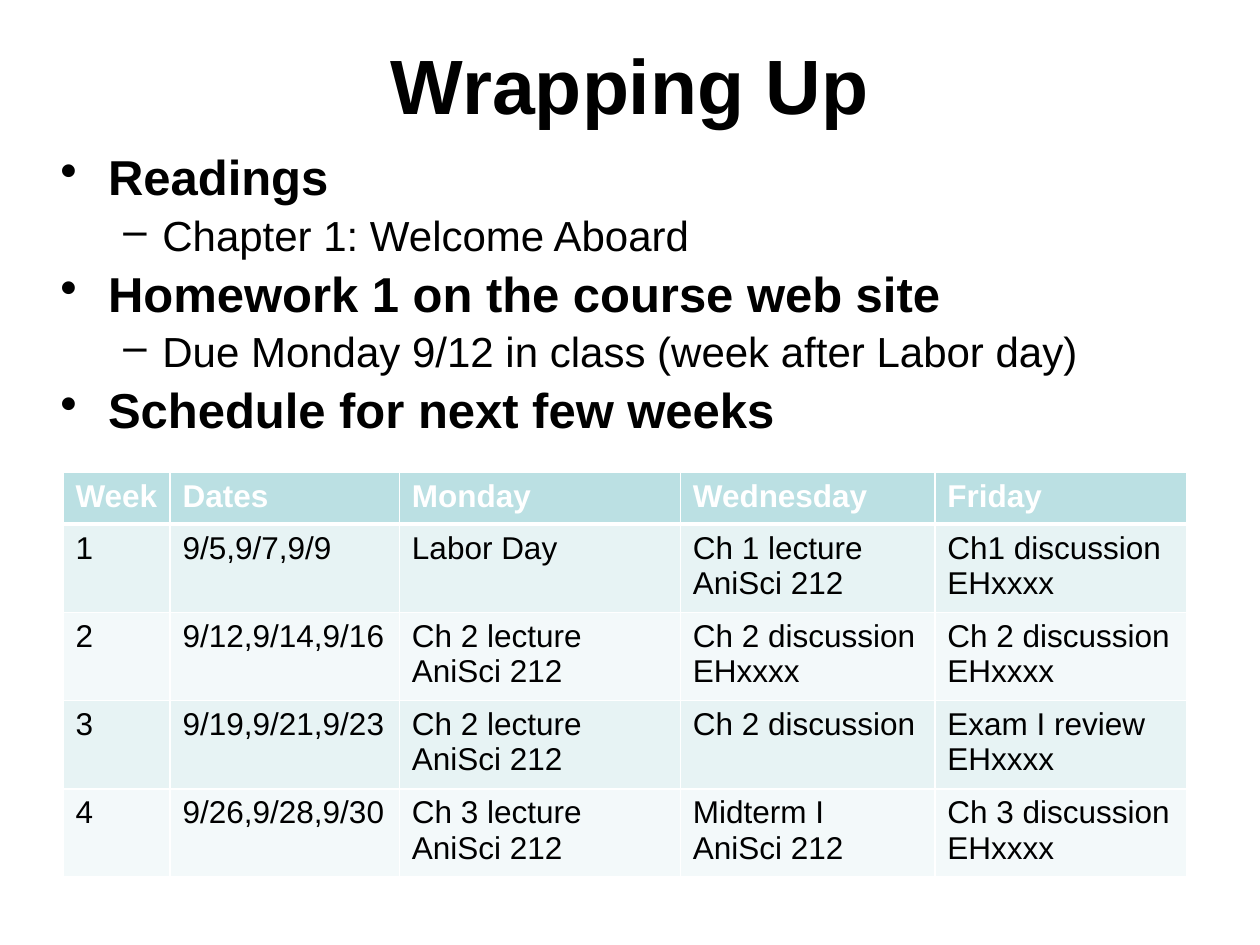
from pptx import Presentation
from pptx.dml.color import RGBColor
from pptx.enum.text import MSO_ANCHOR, PP_ALIGN
from pptx.oxml.ns import qn
from pptx.util import Inches, Pt
from lxml import etree

MIDDLE, CENTER = MSO_ANCHOR.MIDDLE, PP_ALIGN.CENTER
FACE, BLACK, WHITE = "Arial", "000000", "FFFFFF"
HEAD, BANDS = "BBE0E3", ("E7F3F4", "F3F9FA")

TITLE = "Wrapping Up"
POINTS = [
    (0, "Readings"),
    (1, "Chapter 1: Welcome Aboard"),
    (0, "Homework 1 on the course web site"),
    (1, "Due Monday 9/12 in class (week after Labor day)"),
    (0, "Schedule for next few weeks"),
]
# Per level: size, bold, left margin, hanging indent, bullet
LEVELS = [(28, True, 0.38, 0.38, "•"), (24, False, 0.81, 0.31, "–")]

WIDTHS = [0.85, 1.82, 2.23, 2.02, 2]
ROWS = [
    ["Week", "Dates", "Monday", "Wednesday", "Friday"],
    ["1", "9/5,9/7,9/9", "Labor Day", "Ch 1 lecture AniSci 212",
     "Ch1 discussion\nEHxxxx"],
    ["2", "9/12,9/14,9/16", "Ch 2 lecture\nAniSci 212",
     "Ch 2 discussion\nEHxxxx", "Ch 2 discussion\nEHxxxx"],
    ["3", "9/19,9/21,9/23", "Ch 2 lecture\nAniSci 212",
     "Ch 2 discussion", "Exam I review\nEHxxxx"],
    ["4", "9/26,9/28,9/30", "Ch 3 lecture\nAniSci 212",
     "Midterm I\nAniSci 212", "Ch 3 discussion\nEHxxxx"],
]
ROW_H = 0.41


def color(code):
    return RGBColor.from_string(code)


def style(para, size, bold, code=BLACK):
    font = para.font
    font.name, font.size, font.bold = FACE, Pt(size), bold
    font.color.rgb = color(code)


def add_box(slide, *place):
    frame = slide.shapes.add_textbox(*map(Inches, place)).text_frame
    frame.word_wrap = True
    return frame


def add_bullet(para, left, hang, mark):
    props = para._p.get_or_add_pPr()
    props.set("marL", str(Inches(left)))
    props.set("indent", str(-Inches(hang)))
    # The bullet goes before the default run properties
    bullet = etree.Element(qn("a:buChar"), char=mark)
    props.find(qn("a:defRPr")).addprevious(bullet)


def add_edges(cell, bottom):
    props = cell._tc.get_or_add_tcPr()
    for side, width in (("L", 1), ("R", 1), ("T", 1), ("B", bottom)):
        line = etree.SubElement(props, qn("a:ln" + side), w=str(Pt(width)))
        fill = etree.SubElement(line, qn("a:solidFill"))
        etree.SubElement(fill, qn("a:srgbClr"), val=WHITE)


deck = Presentation()
deck.slide_width, deck.slide_height = Inches(10), Inches(7.5)
slide = deck.slides.add_slide(deck.slide_layouts[6])

# Title
frame = add_box(slide, 0.75, 0.33, 8.5, 0.67)
frame.vertical_anchor = MIDDLE
para = frame.paragraphs[0]
para.text, para.alignment = TITLE, CENTER
style(para, 44, True)

# Bullet list
frame = add_box(slide, 0.38, 1.17, 9.25, 5.58)
for i, (level, text) in enumerate(POINTS):
    para = frame.add_paragraph() if i else frame.paragraphs[0]
    size, bold, left, hang, mark = LEVELS[level]
    para.text, para.level = text, level
    para.line_spacing, para.space_before = 0.9, Pt(0.2 * size)
    style(para, size, bold)
    add_bullet(para, left, hang, mark)

# Schedule table
table = slide.shapes.add_table(
    len(ROWS), len(WIDTHS), Inches(0.5), Inches(3.75),
    Inches(sum(WIDTHS)), Inches(ROW_H * len(ROWS))).table
for col, width in zip(table.columns, WIDTHS):
    col.width = Inches(width)
for r, row in enumerate(ROWS):
    table.rows[r].height = Inches(ROW_H)
    top = r == 0
    for c, text in enumerate(row):
        cell = table.cell(r, c)
        cell.text = text
        add_edges(cell, 3 if top or False else 1)
        cell.fill.solid()
        cell.fill.fore_color.rgb = color(HEAD if top else BANDS[(r - 1) % 2])
        for para in cell.text_frame.paragraphs:
            style(para, 18, top, WHITE if top else BLACK)

deck.save("out.pptx")
